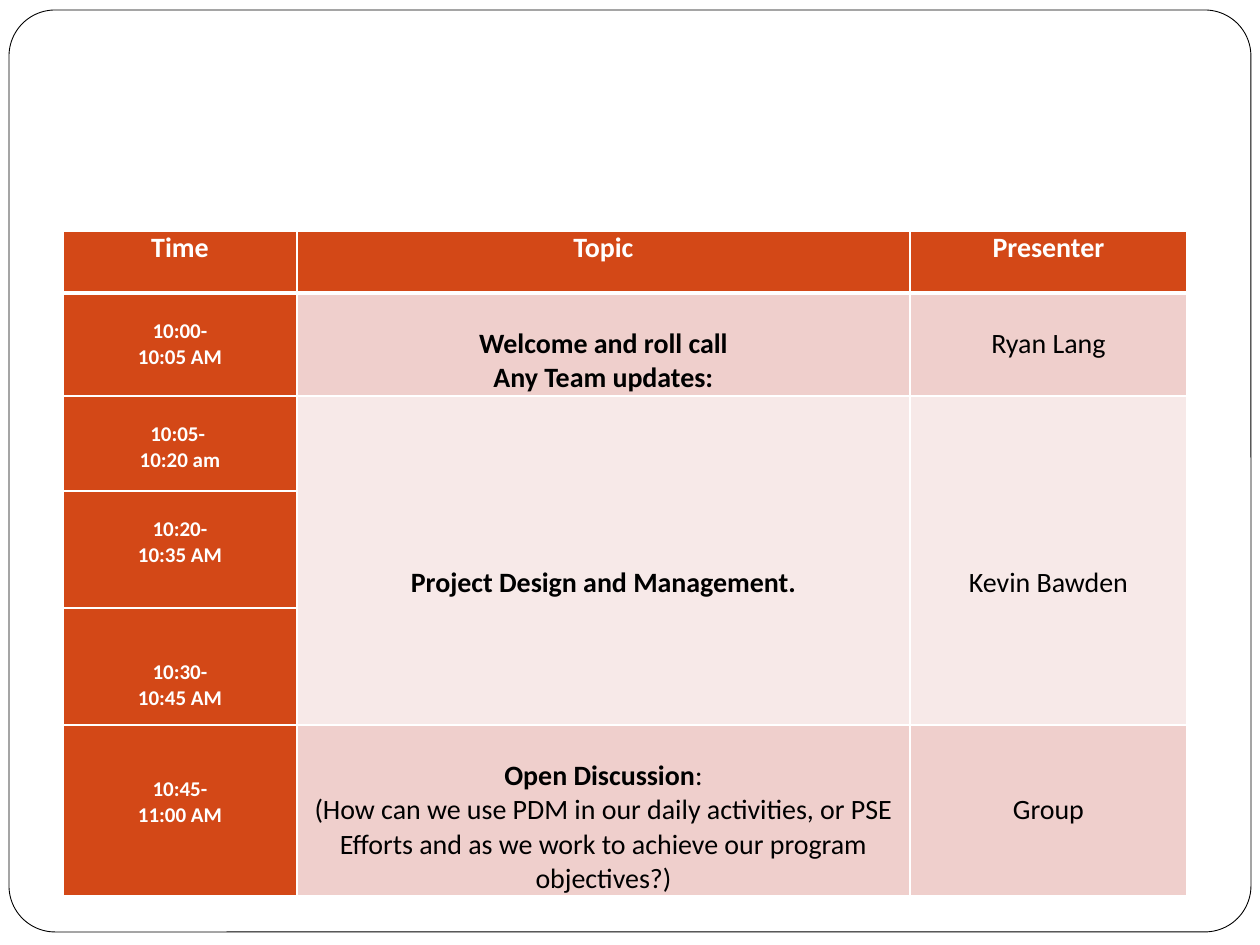
from dataclasses import dataclass

import pptx
import pptx.dml.color
import pptx.enum.shapes
import pptx.enum.text
import pptx.oxml
import pptx.oxml.ns
import pptx.util

PX_PER_INCH = 126
WHITE = pptx.dml.color.RGBColor(0xFF, 0xFF, 0xFF)
BLACK = pptx.dml.color.RGBColor(0x00, 0x00, 0x00)
ORANGE = pptx.dml.color.RGBColor(0xD3, 0x48, 0x17)
ROSE = pptx.dml.color.RGBColor(0xEF, 0xCF, 0xCC)
PALE_ROSE = pptx.dml.color.RGBColor(0xF7, 0xE9, 0xE8)

COLUMN_WIDTHS = (234, 613, 277)
ROW_HEIGHTS = (62, 103, 95, 117, 117, 171)
SMALL_LINE, LARGE_LINE = 26, 34  # line heights of 12 and 16 pt text


@dataclass(frozen=True)
class Entry:
    """One agenda cell; each line is a list of (text, bold) spans."""
    row: int
    column: int
    lines: list[list[tuple[str, bool]]]
    fill: pptx.dml.color.RGBColor
    color: pptx.dml.color.RGBColor = BLACK
    size: int = 16
    top: int = 0
    rows: int = 1


def header(column: int, title: str) -> Entry:
    return Entry(0, column, [[(title, True)]], ORANGE, WHITE)


def time_slot(row: int, start: str, end: str, blank_lines: int = 1) -> Entry:
    return Entry(row, 0, [[(start, True)], [(end, True)]], ORANGE, WHITE, 12,
                 blank_lines * SMALL_LINE)


AGENDA = [
    header(0, "Time"),
    header(1, "Topic"),
    header(2, "Presenter"),
    time_slot(1, "10:00-", "10:05 AM"),
    time_slot(2, "10:05- ", "10:20 am"),
    time_slot(3, "10:20-", "10:35 AM"),
    time_slot(4, "10:30-", "10:45 AM", blank_lines=2),
    time_slot(5, "10:45-", "11:00 AM", blank_lines=2),
    Entry(1, 1, [[("Welcome and roll call", True)], [("Any Team updates:", True)]],
          ROSE, top=LARGE_LINE),
    Entry(1, 2, [[("Ryan Lang", False)]], ROSE, top=LARGE_LINE),
    Entry(2, 1, [[("Project Design and Management.", True)]],
          PALE_ROSE, top=5 * LARGE_LINE, rows=3),
    Entry(2, 2, [[("Kevin Bawden", False)]],
          PALE_ROSE, top=5 * LARGE_LINE, rows=3),
    Entry(5, 1, [[("Open Discussion", True), (":", False)],
                 [("(How can we use PDM in our daily activities, or PSE Efforts "
                   "and as we work to achieve our program objectives?)", False)]],
          ROSE, top=LARGE_LINE),
    Entry(5, 2, [[("Group", False)]], ROSE, top=2 * LARGE_LINE),
]


def px(length: int) -> pptx.util.Emu:
    return pptx.util.Emu(round(length * 914400 / PX_PER_INCH))


def add_span(para, text: str, *, size: int, bold: bool, color) -> None:
    span = para.add_run()
    span.text = text
    span.font.name = "Calibri"
    span.font.size = pptx.util.Pt(size)
    span.font.bold = bold
    span.font.color.rgb = color


def add_borders(cell, row: int) -> None:
    """White lines, thicker between the header and the body."""
    widths = {"lnL": 1, "lnR": 1, "lnT": 3 if row == 1 else 1,
              "lnB": 3 if row == 0 else 1}
    properties = cell._tc.get_or_add_tcPr()
    for index, (side, width) in enumerate(widths.items()):
        properties.insert(index, pptx.oxml.parse_xml(
            f'<a:{side} {pptx.oxml.ns.nsdecls("a")} w="{pptx.util.Pt(width)}">'
            f'<a:solidFill><a:srgbClr val="{WHITE}"/></a:solidFill></a:{side}>'))


def fill_cell(table, entry: Entry) -> None:
    cell = table.cell(entry.row, entry.column)
    if entry.rows > 1:
        cell.merge(table.cell(entry.row + entry.rows - 1, entry.column))
    for row in range(entry.row, entry.row + entry.rows):
        part = table.cell(row, entry.column)
        part.fill.solid()
        part.fill.fore_color.rgb = entry.fill
        add_borders(part, row)
    cell.margin_left = cell.margin_right = px(9)
    cell.margin_top, cell.margin_bottom = px(entry.top), 0
    for index, line in enumerate(entry.lines):
        frame = cell.text_frame
        para = frame.add_paragraph() if index else frame.paragraphs[0]
        para.alignment = pptx.enum.text.PP_ALIGN.CENTER
        for text, bold in line:
            add_span(para, text, size=entry.size, bold=bold, color=entry.color)


def main() -> None:
    deck = pptx.Presentation()
    deck.slide_width, deck.slide_height = px(1260), px(945)
    page = deck.slides.add_slide(deck.slide_layouts[6])

    # Rounded page frame
    box = page.shapes.add_shape(pptx.enum.shapes.MSO_SHAPE.ROUNDED_RECTANGLE,
                                px(9), px(10), px(1242), px(922))
    box.adjustments[0] = 0.05
    box.shadow.inherit = False
    box.fill.solid()
    box.fill.fore_color.rgb = WHITE
    box.line.color.rgb = BLACK
    box.line.width = pptx.util.Pt(0.5)

    # Agenda table
    table = page.shapes.add_table(
        len(ROW_HEIGHTS), len(COLUMN_WIDTHS), px(63), px(231),
        px(sum(COLUMN_WIDTHS)), px(sum(ROW_HEIGHTS))).table
    table.horz_banding = False
    for column, width in zip(table.columns, COLUMN_WIDTHS):
        column.width = px(width)
    for row, height in zip(table.rows, ROW_HEIGHTS):
        row.height = px(height)
    for entry in AGENDA:
        fill_cell(table, entry)

    deck.save("out.pptx")


if __name__ == "__main__":
    main()
